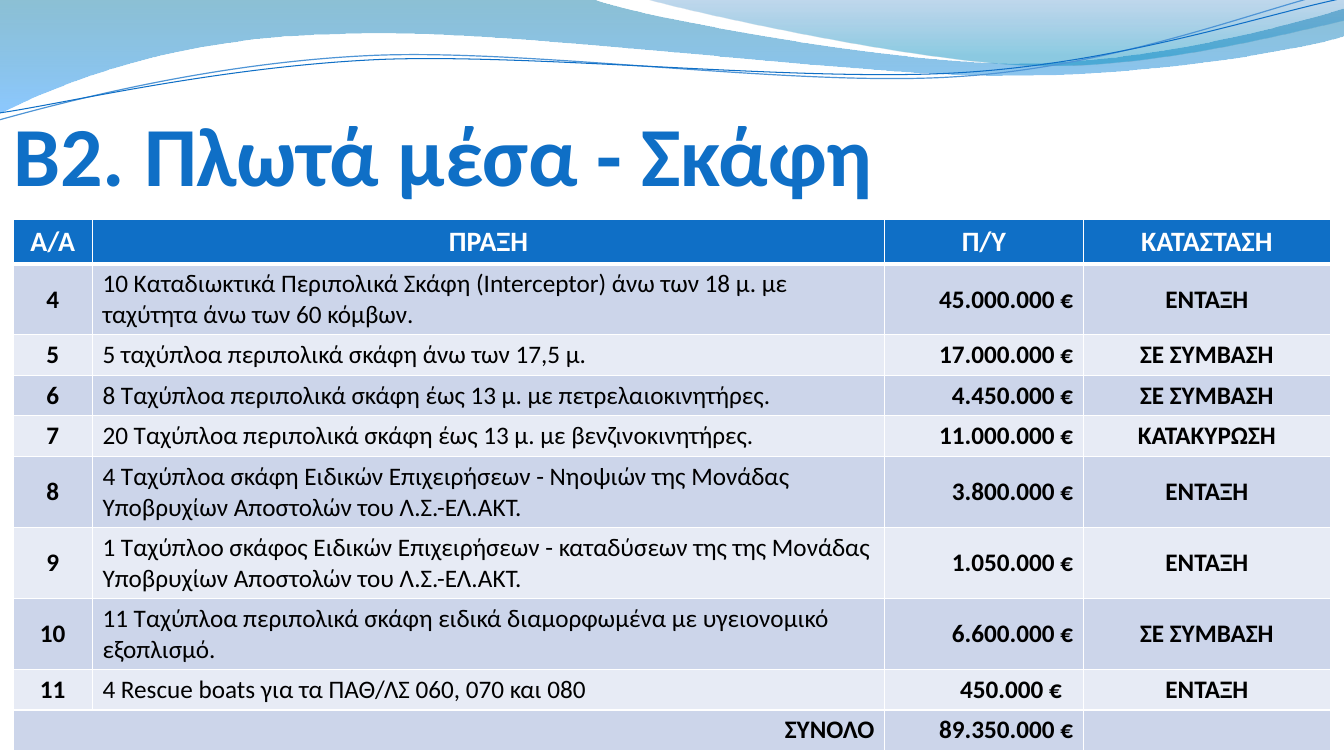
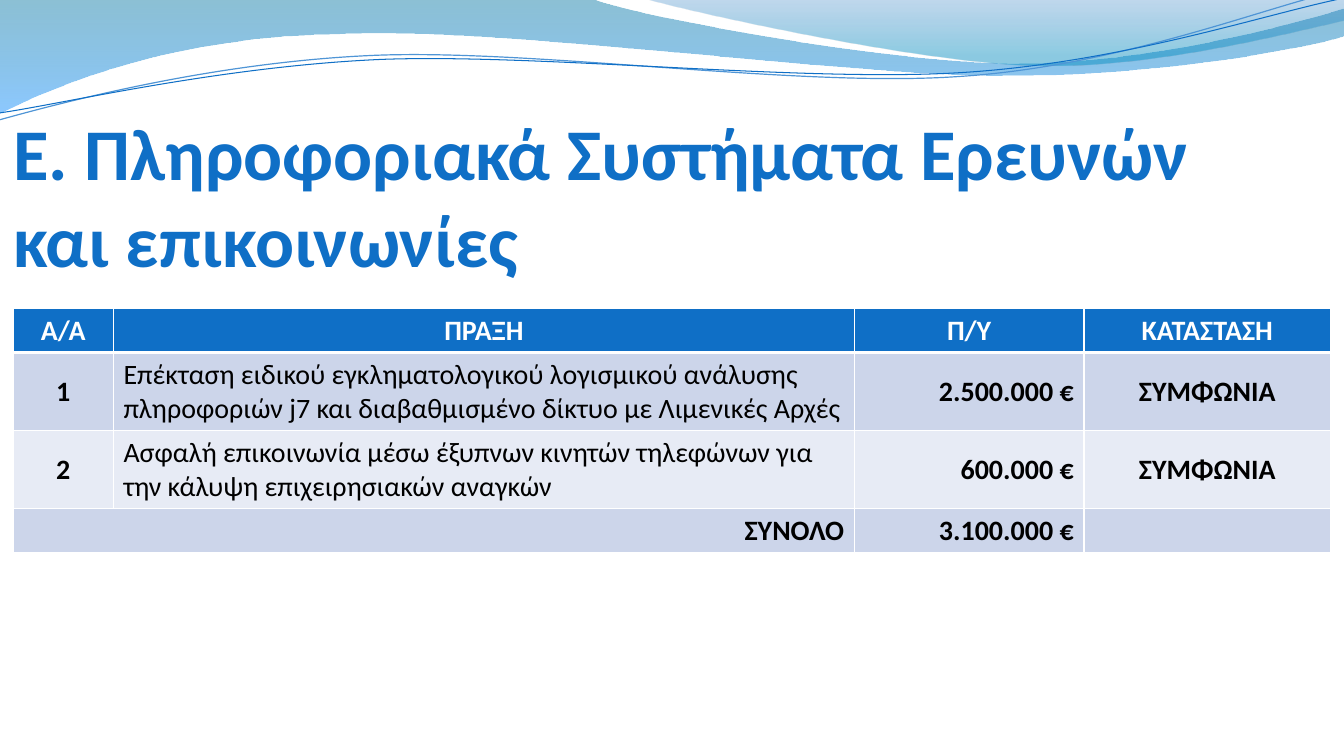
"""Build two budget table slides under a shared wave header."""
import lxml.etree
import pptx
import pptx.dml.color
import pptx.enum.text
import pptx.oxml.ns
import pptx.util

ALIGN = pptx.enum.text.PP_ALIGN
ANCHOR = pptx.enum.text.MSO_ANCHOR
Cm = pptx.util.Cm
Pt = pptx.util.Pt
qn = pptx.oxml.ns.qn

COLORS = {
    "blue": "0F6FC6", "light_blue": "4F95D6", "white": "FFFFFF", "black": "000000",
    "band_dark": "CCD5EA", "band_light": "E7EBF5",
    "wave_teal": "0074A1", "wave_sky": "2D9BFF", "wave_steel": "317EC4", "wave_cyan": "008BBF",
}
FONT = "Calibri"
LEFT = 0.33
HEADER = ("A/A", "ΠΡΑΞΗ", "Π/Υ", "ΚΑΤΑΣΤΑΣΗ")
HEADER_SIZE = 20
TOTAL = "ΣΥΝΟΛΟ"
COLUMN_ALIGN = (ALIGN.CENTER, ALIGN.LEFT, ALIGN.RIGHT, ALIGN.CENTER)
LINE_HEIGHT = {18: 0.77, 20: 0.86}
ROW_PADDING = 0.25
LINE_CHARACTERS = 65

SLIDES = [
    {
        "title": "Β2. Πλωτά μέσα - Σκάφη",
        "title_size": 60, "title_top": 2.92, "title_height": 2.21,
        "table_top": 5.54, "size": 18, "columns": (2, 19.96, 5.01, 6.23),
        "rows": [
            ("4", "10 Καταδιωκτικά Περιπολικά Σκάφη (Interceptor) άνω των 18 μ. με ταχύτητα άνω των 60 κόμβων.",
             "45.000.000 €", "ΕΝΤΑΞΗ"),
            ("5", "5 ταχύπλοα περιπολικά σκάφη άνω των 17,5 μ.", "17.000.000 €", "ΣΕ ΣΥΜΒΑΣΗ"),
            ("6", "8 Ταχύπλοα περιπολικά σκάφη έως 13 μ. με πετρελαιοκινητήρες.", "4.450.000 €", "ΣΕ ΣΥΜΒΑΣΗ"),
            ("7", "20 Ταχύπλοα περιπολικά σκάφη έως 13 μ. με βενζινοκινητήρες.", "11.000.000 €", "ΚΑΤΑΚΥΡΩΣΗ"),
            ("8", "4 Ταχύπλοα σκάφη Ειδικών Επιχειρήσεων - Νηοψιών της Μονάδας Υποβρυχίων Αποστολών του Λ.Σ.-ΕΛ.ΑΚΤ.",
             "3.800.000 €", "ΕΝΤΑΞΗ"),
            ("9", "1 Ταχύπλοο σκάφος Ειδικών Επιχειρήσεων - καταδύσεων της της Μονάδας "
                  "Υποβρυχίων Αποστολών του Λ.Σ.-ΕΛ.ΑΚΤ.", "1.050.000 €", "ΕΝΤΑΞΗ"),
            ("10", "11 Ταχύπλοα περιπολικά σκάφη ειδικά διαμορφωμένα με υγειονομικό εξοπλισμό.",
             "6.600.000 €", "ΣΕ ΣΥΜΒΑΣΗ"),
            ("11", "4 Rescue boats για τα ΠΑΘ/ΛΣ 060, 070 και 080", "450.000 €", "ΕΝΤΑΞΗ"),
        ],
        "total": "89.350.000 €",
        "right_margins": {(8, 2): 0.54},
    },
    {
        "title": "Ε. Πληροφοριακά Συστήματα Ερευνών και επικοινωνίες",
        "title_size": 52, "title_top": 3.12, "title_height": 3.99,
        "table_top": 7.77, "size": 20, "columns": (2.53, 18.67, 5.79, 6.21),
        "rows": [
            ("1", "Επέκταση ειδικού εγκληματολογικού λογισμικού ανάλυσης πληροφοριών j7 "
                  "και διαβαθμισμένο δίκτυο με Λιμενικές Αρχές", "2.500.000 €", "ΣΥΜΦΩΝΙΑ"),
            ("2", "Ασφαλή επικοινωνία μέσω έξυπνων κινητών τηλεφώνων για την κάλυψη επιχειρησιακών αναγκών",
             "600.000 €", "ΣΥΜΦΩΝΙΑ"),
        ],
        "total": "3.100.000 €",
        "right_margins": {},
    },
]

CM_PER_UNIT = 2.54
WAVES = [
    {"points": [(0, 0), (5.87, -0.01), (6.34, 0.17, 8.85, 0.63, 10.11, 0.63),
                (11.38, 0.63, 12.78, 0.26, 13.33, 0.09), (13.35, 0.36),
                (13.11, 0.44, 11.6, 0.76, 9.94, 0.75), (8.29, 0.75, 5.09, 0.28, 3.43, 0.34),
                (1.72, 0.36, 0.61, 0.83, -0.01, 1.13), (0, 0)],
     "stops": [(0, "wave_teal", 45), (1, "wave_sky", 55)]},
    {"points": [(6.39, -0.01), (6.79, 0.11, 9.09, 0.62, 10.25, 0.65),
                (11.41, 0.69, 12.82, 0.32, 13.33, 0.21), (13.33, 0), (6.39, -0.01)],
     "stops": [(0, "wave_steel", 30), (0.8, "wave_cyan", 45)]},
    {"points": [(-0.01, 1.19), (0.64, 1.01, 2.11, 0.62, 3.69, 0.55),
                (5.27, 0.48, 7.9, 0.87, 9.5, 0.76), (11.1, 0.66, 12.52, 0.08, 13.31, -0.1)],
     "line": ("light_blue", 0.85)},
    {"points": [(0, 1.12), (0.63, 1.03, 2.18, 0.66, 3.78, 0.59),
                (5.37, 0.53, 7.96, 0.82, 9.55, 0.72), (11.15, 0.62, 12.55, 0.14, 13.34, -0.02)],
     "line": ("blue", 0.75)},
]


def rgb(name):
    """Return the named colour."""
    return pptx.dml.color.RGBColor.from_string(COLORS[name])


def set_format(target, values):
    """Set every attribute in values on target."""
    for name, value in values.items():
        setattr(target, name, value)


def write(text_frame, text, size, color, bold=True, alignment=ALIGN.LEFT):
    """Write one formatted paragraph."""
    paragraph = text_frame.paragraphs[0]
    paragraph.text = text
    paragraph.alignment = alignment
    set_format(paragraph.font, {"name": FONT, "size": Pt(size), "bold": bold})
    paragraph.font.color.rgb = rgb(color)


def bend(shape, segments):
    """Join the three points of each curved segment into one cubic curve."""
    lines = shape.element.iter(qn("a:lnTo"))
    lines = iter(list(lines))
    for segment in segments:
        steps = [next(lines) for _ in range(len(segment) // 2)]
        if len(steps) == 1:
            continue
        curve = lxml.etree.Element(qn("a:cubicBezTo"))
        steps[0].addprevious(curve)
        for step in steps:
            curve.append(step[0])
            step.getparent().remove(step)


def add_wave(slide, wave):
    """Draw one filled wave or wave line."""
    vertices = [(Cm(x * CM_PER_UNIT), Cm(y * CM_PER_UNIT))
                for segment in wave["points"] for x, y in zip(segment[0::2], segment[1::2])]
    builder = slide.shapes.build_freeform(*vertices[0])
    builder.add_line_segments(vertices[1:], close="stops" in wave)
    shape = builder.convert_to_shape()
    bend(shape, wave["points"][1:])
    shape.shadow.inherit = False
    if "line" in wave:
        color, width = wave["line"]
        shape.fill.background()
        shape.line.color.rgb = rgb(color)
        shape.line.width = Pt(width)
        return shape
    shape.line.fill.background()
    shape.fill.gradient()
    shape.fill.gradient_angle = 270
    for stop, (position, color, _) in zip(shape.fill.gradient_stops, wave["stops"]):
        stop.position = position
        stop.color.rgb = rgb(color)
    gradient = shape.element.spPr.find(qn("a:gradFill"))
    for element, (_, _, opacity) in zip(gradient.iter(qn("a:srgbClr")), wave["stops"]):
        lxml.etree.SubElement(element, qn("a:alpha"), val=str(opacity * 1000))
    return shape


def decorate_layout(layout, slide):
    """Draw the waves and move them to the layout that all slides share."""
    for placeholder in list(layout.placeholders):
        placeholder.element.getparent().remove(placeholder.element)
    for shape in [add_wave(slide, wave) for wave in WAVES]:
        layout.element.cSld.spTree.append(shape.element)


def add_title(slide, content):
    """Add the slide title."""
    box = slide.shapes.add_textbox(Cm(LEFT), Cm(content["title_top"]), Cm(30.2), Cm(content["title_height"]))
    set_format(box.text_frame, {
        "word_wrap": True, "vertical_anchor": ANCHOR.BOTTOM,
        "margin_left": 0, "margin_top": Cm(0.13), "margin_right": 0, "margin_bottom": 0,
    })
    write(box.text_frame, content["title"], content["title_size"], "blue")


def style_cell(cell, fill, top, bottom):
    """Fill a cell and give it white borders."""
    cell.fill.solid()
    cell.fill.fore_color.rgb = rgb(fill)
    properties = cell._tc.get_or_add_tcPr()
    for index, (side, width) in enumerate((("L", 1), ("R", 1), ("T", top), ("B", bottom))):
        border = lxml.etree.Element(qn(f"a:ln{side}"), w=str(Pt(width)))
        border_fill = lxml.etree.SubElement(border, qn("a:solidFill"))
        lxml.etree.SubElement(border_fill, qn("a:srgbClr"), val=COLORS["white"])
        properties.insert(index, border)


def add_budget_table(slide, content):
    """Add the table of actions with its total row."""
    rows = [HEADER, *content["rows"], (TOTAL, "", content["total"], "")]
    widths = content["columns"]
    sizes = [HEADER_SIZE] + [content["size"]] * (len(rows) - 1)
    heights = [ROW_PADDING + LINE_HEIGHT[size] * (2 if len(row[1]) > LINE_CHARACTERS else 1)
               for size, row in zip(sizes, rows)]
    table = slide.shapes.add_table(len(rows), len(widths), Cm(LEFT), Cm(content["table_top"]),
                                   Cm(sum(widths)), Cm(sum(heights))).table
    for column, width in zip(table.columns, widths):
        column.width = Cm(width)
    last = len(rows) - 1
    for row_index, row in enumerate(rows):
        table.rows[row_index].height = Cm(heights[row_index])
        is_header = row_index == 0
        fill = "blue" if is_header else ("band_light", "band_dark")[row_index % 2]
        for column_index, text in enumerate(row):
            cell = table.cell(row_index, column_index)
            style_cell(cell, fill, 3 if row_index == 1 else 1, 3 if is_header else 1)
            cell.vertical_anchor = ANCHOR.TOP if is_header else ANCHOR.MIDDLE
            alignment = ALIGN.CENTER if is_header else COLUMN_ALIGN[column_index]
            if row_index == last:
                alignment = ALIGN.RIGHT
            write(cell.text_frame, text, sizes[row_index], "white" if is_header else "black",
                  is_header or column_index != 1, alignment)
    for position, margin in content["right_margins"].items():
        table.cell(*position).margin_right = Cm(margin)
    table.cell(last, 0).merge(table.cell(last, 1))


def main():
    """Build and save the presentation."""
    presentation = pptx.Presentation()
    set_format(presentation, {"slide_width": Cm(33.87), "slide_height": Cm(19.05)})
    layout = presentation.slide_layouts[6]
    slides = [presentation.slides.add_slide(layout) for _ in SLIDES]
    decorate_layout(layout, slides[0])
    for slide, content in zip(slides, SLIDES):
        add_title(slide, content)
        add_budget_table(slide, content)
    presentation.save("out.pptx")


if __name__ == "__main__":
    main()
